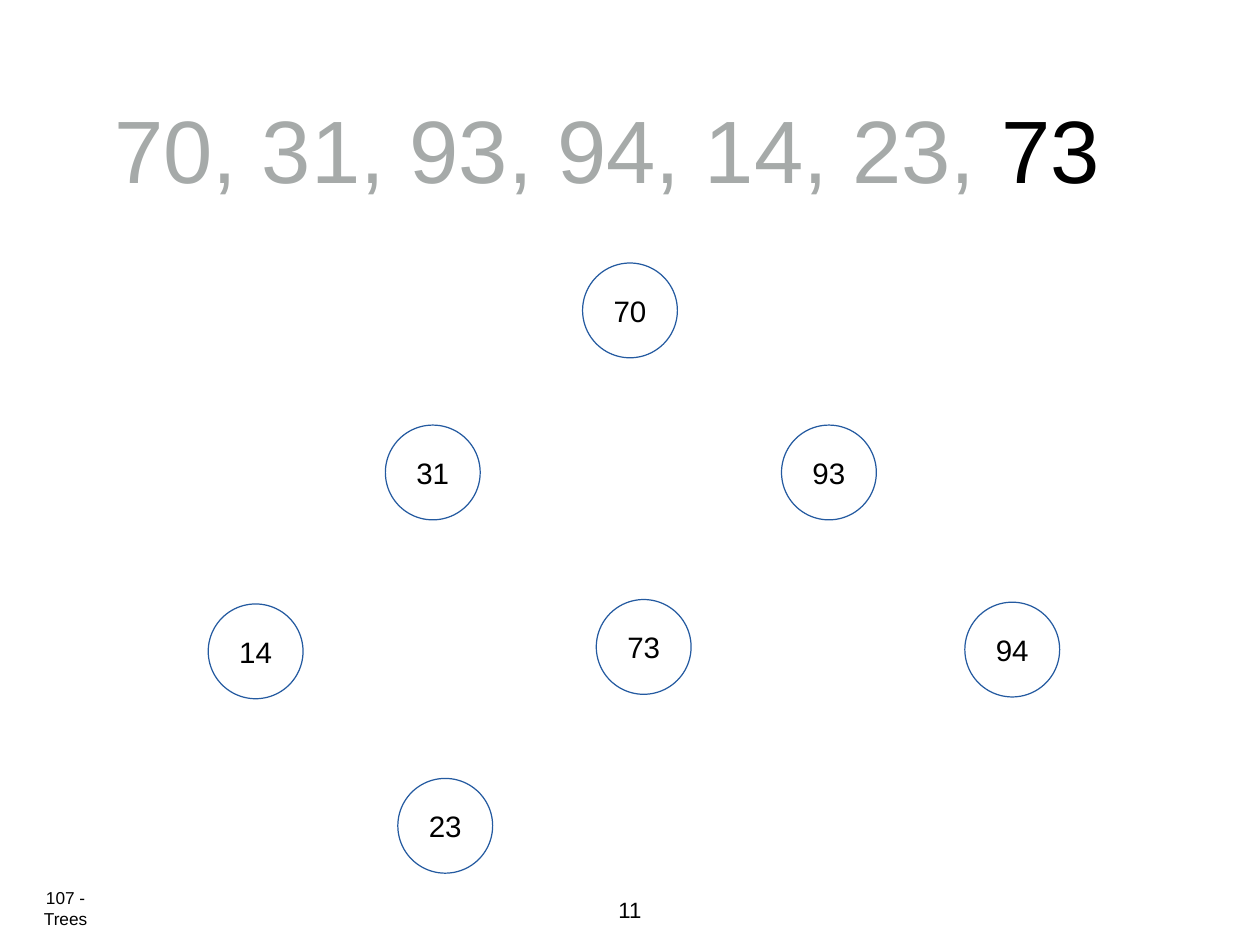
from pptx import Presentation
from pptx.dml.color import RGBColor
from pptx.enum.shapes import MSO_SHAPE
from pptx.enum.text import MSO_ANCHOR, PP_ALIGN
from pptx.util import Inches, Pt

BLACK = RGBColor(0x00, 0x00, 0x00)
WHITE = RGBColor(0xFF, 0xFF, 0xFF)
GREY = RGBColor(0xA6, 0xAA, 0xA9)
BLUE = RGBColor(0x24, 0x5A, 0xA0)
SLIDE_WIDTH, SLIDE_HEIGHT = 14.22, 10.67
NODE_DIAMETER = 1.07

INSERTED = "70, 31, 93, 94, 14, 23, "
CURRENT = "73"
NODE_CENTRES = {
    "70": (50, 32.85),
    "31": (34.35, 50),
    "93": (65.79, 50),
    "94": (80.34, 68.74),
    "14": (20.29, 68.93),
    "23": (35.34, 87.39),
    "73": (51.09, 68.46),
}


def write(holder, *runs, size, align=PP_ALIGN.CENTER, anchor=MSO_ANCHOR.MIDDLE,
          insets=(0, 0, 0, 0), wrap=True, space_before=0, indent=0):
    frame = holder.text_frame
    frame.word_wrap = wrap
    frame.vertical_anchor = anchor
    (frame.margin_left, frame.margin_top,
     frame.margin_right, frame.margin_bottom) = map(Inches, insets)
    paragraph = frame.paragraphs[0]
    paragraph.alignment = align
    paragraph.space_before = Pt(space_before)
    if indent:
        properties = paragraph._p.get_or_add_pPr()
        properties.set("marL", "0")
        properties.set("indent", str(Inches(indent)))
    for text, color in runs:
        run = paragraph.add_run()
        run.text = text
        run.font.name = "Arial"
        run.font.size = Pt(size)
        run.font.color.rgb = color


def add_text(slide, box, *runs, **text_format):
    holder = slide.shapes.add_textbox(*map(Inches, box))
    write(holder, *runs, **text_format)


def add_footer(slide, box):
    left, top, width, height = box
    add_text(slide, (left, top, 1.09, 0.35), ("107 - Trees", BLACK),
             size=14, insets=(0.04, 0.06, 0.53, 0.06))
    add_text(slide, (left + (width - 0.4) / 2, top + 0.04, 0.4, height),
             ("11", BLACK), size=18, anchor=MSO_ANCHOR.TOP, wrap=False)


def add_sequence(slide, box):
    add_text(slide, box, (INSERTED, GREY), (CURRENT, BLACK), size=72,
             align=PP_ALIGN.LEFT, space_before=42, indent=0.25)


def add_tree(slide, box):
    left, top, width, height = box
    for key, (across, down) in NODE_CENTRES.items():
        x = left + width * across / 100 - NODE_DIAMETER / 2
        y = top + height * down / 100 - NODE_DIAMETER / 2
        node = slide.shapes.add_shape(
            MSO_SHAPE.OVAL, Inches(x), Inches(y),
            Inches(NODE_DIAMETER), Inches(NODE_DIAMETER))
        node.shadow.inherit = False
        node.fill.solid()
        node.fill.fore_color.rgb = WHITE
        node.line.color.rgb = BLUE
        node.line.width = Pt(1)
        write(node, (key, BLACK), size=24)


def main():
    deck = Presentation()
    deck.slide_width = Inches(SLIDE_WIDTH)
    deck.slide_height = Inches(SLIDE_HEIGHT)
    slide = deck.slides.add_slide(deck.slide_layouts[6])
    add_footer(slide, (0.44, 10.08, SLIDE_WIDTH - 2 * 0.44, 0.42))
    add_sequence(slide, (1.04, 0.49, 12.14, 2.36))
    add_tree(slide, (0, 0, SLIDE_WIDTH, SLIDE_HEIGHT))
    deck.save("out.pptx")


if __name__ == "__main__":
    main()
